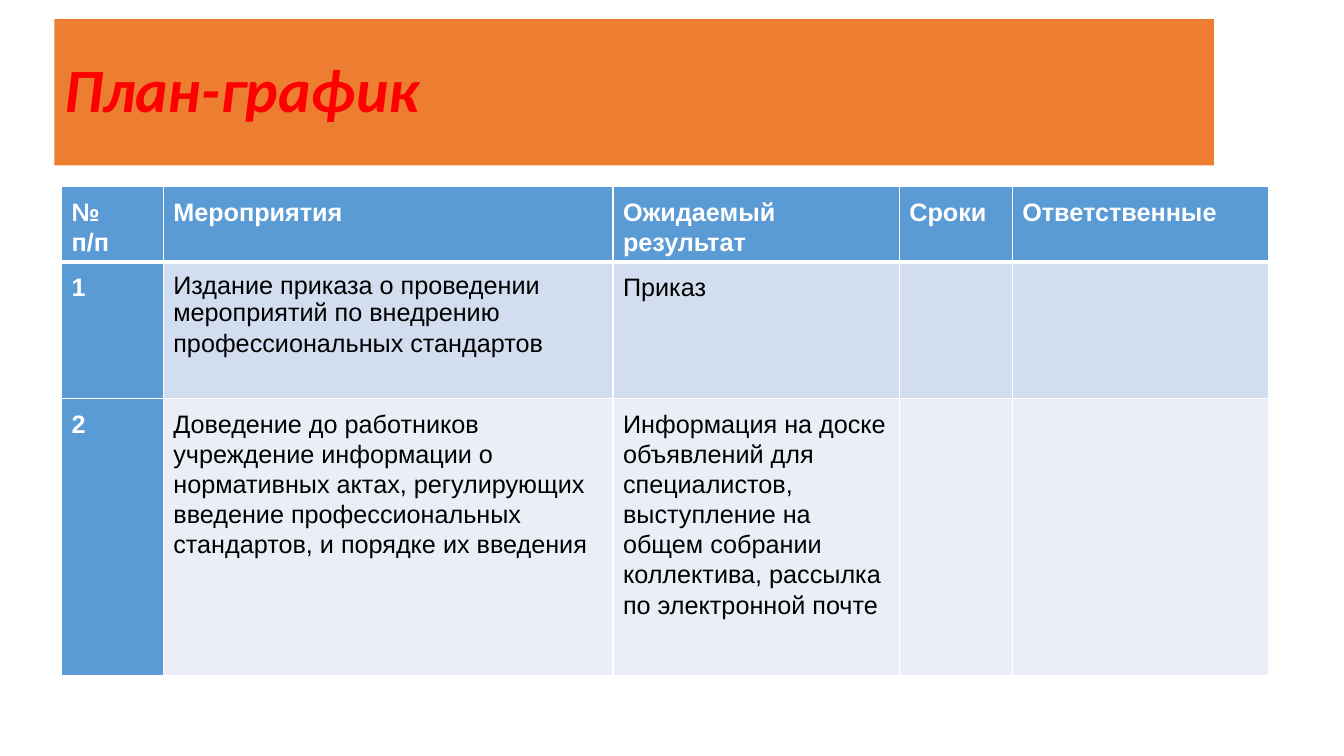
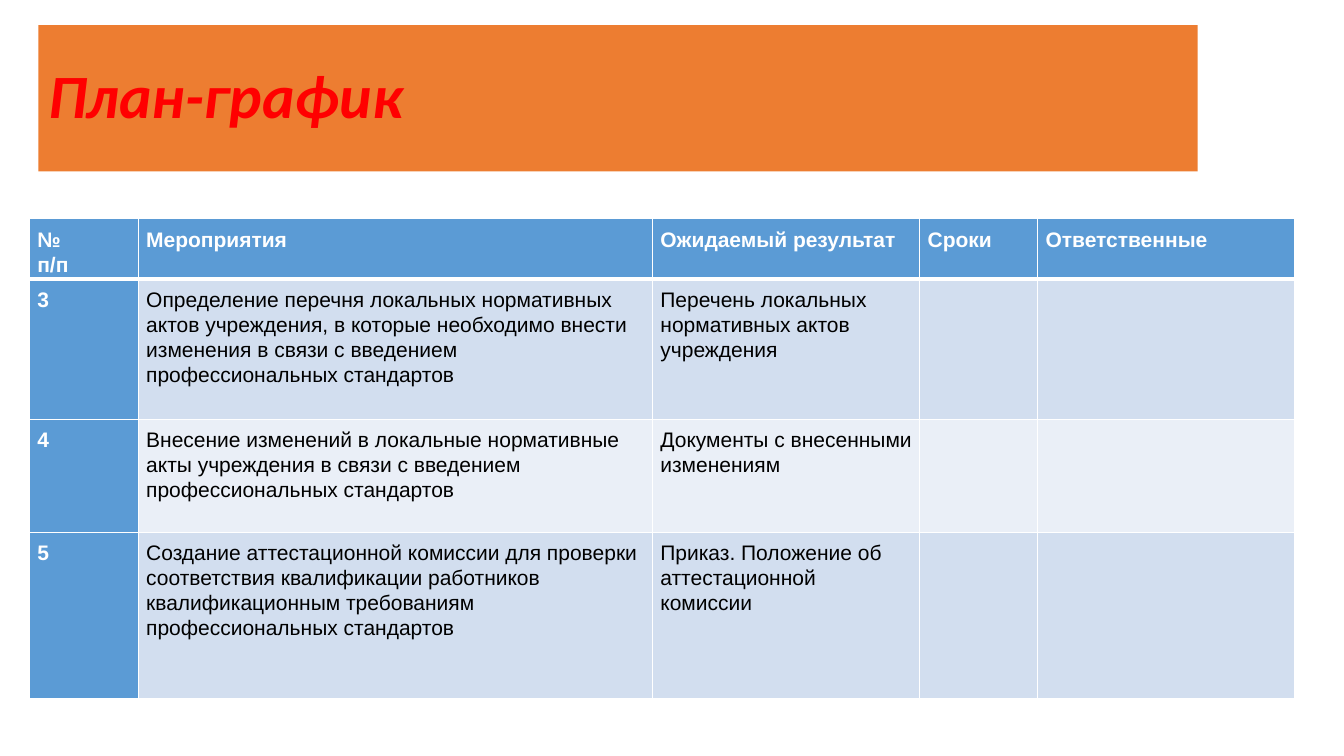
"""Builds two slides of a plan schedule, each with a title band and a table."""
from pptx import Presentation
from pptx.dml.color import RGBColor
from pptx.enum.shapes import MSO_SHAPE
from pptx.enum.text import MSO_ANCHOR, PP_ALIGN
from pptx.oxml import parse_xml
from pptx.oxml.ns import nsdecls
from pptx.util import Inches, Pt

BLUE, WHITE, BLACK = "5B9BD5", "FFFFFF", "000000"
ORANGE, RED = "ED7D31", "FF0000"
ROW_FILLS = ["D2DEEF", "EAEFF7"]
HEADINGS = ["№\nп/п", "Мероприятия", "Ожидаемый результат", "Сроки", "Ответственные"]

SLIDES = [
    {
        "band": (0.54, 0.19),
        "table": (0.61, 1.85),
        "widths": [1.01, 4.46, 2.84, 1.12, 2.54],
        "heights": [0.75, 1.35, 2.75],
        "margins": (0.1, 0.1, 0.06),
        "size": 18,
        "rows": [
            ["1", "Издание приказа о проведении мероприятий по внедрению\n"
                  "профессиональных стандартов", "Приказ", "", ""],
            ["2", "Доведение до работников учреждение информации о нормативных актах, "
                  "регулирующих введение профессиональных стандартов, и порядке их введения",
             "Информация на доске объявлений для специалистов, выступление на общем "
             "собрании коллектива, рассылка по электронной почте", "", ""],
        ],
    },
    {
        "band": (0.38, 0.25),
        "table": (0.29, 2.17),
        "widths": [1.08, 5.1, 2.65, 1.17, 2.55],
        "heights": [0.6, 1.39, 1.12, 1.65],
        "margins": (0.08, 0.08, 0.07),
        "size": 15,
        "rows": [
            ["3", "Определение перечня локальных нормативных актов учреждения, в которые "
                  "необходимо внести изменения в связи с введением профессиональных стандартов",
             "Перечень локальных нормативных актов учреждения", "", ""],
            ["4", "Внесение изменений в локальные нормативные акты учреждения в связи "
                  "с введением профессиональных стандартов",
             "Документы с внесенными изменениям", "", ""],
            ["5", "Создание аттестационной комиссии для проверки соответствия квалификации "
                  "работников квалификационным требованиям профессиональных стандартов",
             "Приказ. Положение об аттестационной комиссии", "", ""],
        ],
    },
]


def color(hex_code):
    """Turns a hex string into a colour."""
    return RGBColor.from_string(hex_code)


def add_borders(cell, top, bottom):
    """Draws white cell borders, with top and bottom widths in points."""
    for side, width in {"L": 1, "R": 1, "T": top, "B": bottom}.items():
        cell._tc.get_or_add_tcPr().append(parse_xml(
            f'<a:ln{side} {nsdecls("a")} w="{Pt(width)}"><a:solidFill>'
            f'<a:srgbClr val="{WHITE}"/></a:solidFill></a:ln{side}>'))


prs = Presentation()
prs.slide_width, prs.slide_height = Inches(13.33), Inches(7.5)

for content in SLIDES:
    slide = prs.slides.add_slide(prs.slide_layouts[6])

    left, top = content["band"]
    band = slide.shapes.add_shape(
        MSO_SHAPE.RECTANGLE, Inches(left), Inches(top), Inches(11.5), Inches(1.45))
    band.shadow.inherit = False
    band.fill.solid()
    band.fill.fore_color.rgb = color(ORANGE)
    band.line.fill.background()
    band.text_frame.word_wrap = True
    band.text_frame.vertical_anchor = MSO_ANCHOR.MIDDLE
    title = band.text_frame.paragraphs[0]
    title.text = "План-график"
    title.alignment = PP_ALIGN.LEFT
    title.line_spacing = 0.9
    title.font.name, title.font.size = "Calibri", Pt(44)
    title.font.bold = title.font.italic = True
    title.font.color.rgb = color(RED)

    rows = [HEADINGS] + content["rows"]
    widths, heights = content["widths"], content["heights"]
    left, top = content["table"]
    schedule = slide.shapes.add_table(
        len(rows), len(HEADINGS), Inches(left), Inches(top),
        Inches(sum(widths)), Inches(sum(heights))).table
    for column, width in zip(schedule.columns, widths):
        column.width = Inches(width)

    for row_index, texts in enumerate(rows):
        schedule.rows[row_index].height = Inches(heights[row_index])
        for column_index, text in enumerate(texts):
            cell = schedule.cell(row_index, column_index)
            is_heading = row_index == 0 or column_index == 0
            add_borders(cell, 3 if row_index == 1 else 1, 3 if row_index == 0 else 1)
            cell.fill.solid()
            cell.fill.fore_color.rgb = color(
                BLUE if is_heading else ROW_FILLS[(row_index - 1) % 2])
            cell.margin_left, cell.margin_top, cell.margin_right = map(
                Inches, content["margins"])
            cell.margin_bottom = 0
            cell.text_frame.text = text
            for paragraph in cell.text_frame.paragraphs:
                paragraph.line_spacing = 1.07
                paragraph.font.name = "Arial"
                paragraph.font.size = Pt(content["size"])
                paragraph.font.bold = is_heading
                paragraph.font.color.rgb = color(WHITE if is_heading else BLACK)

    if content is SLIDES[0]:
        schedule.cell(1, 1).text_frame.paragraphs[0].line_spacing = 0.98

prs.save("out.pptx")
